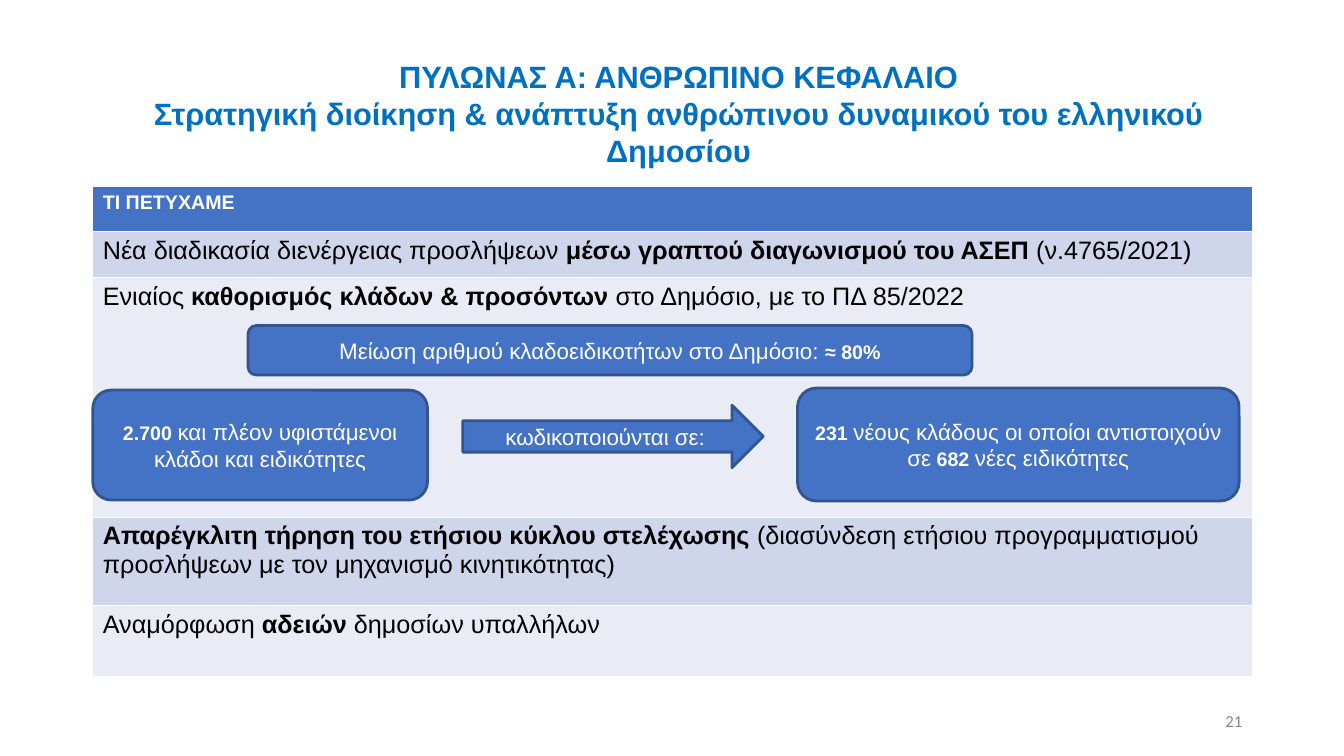
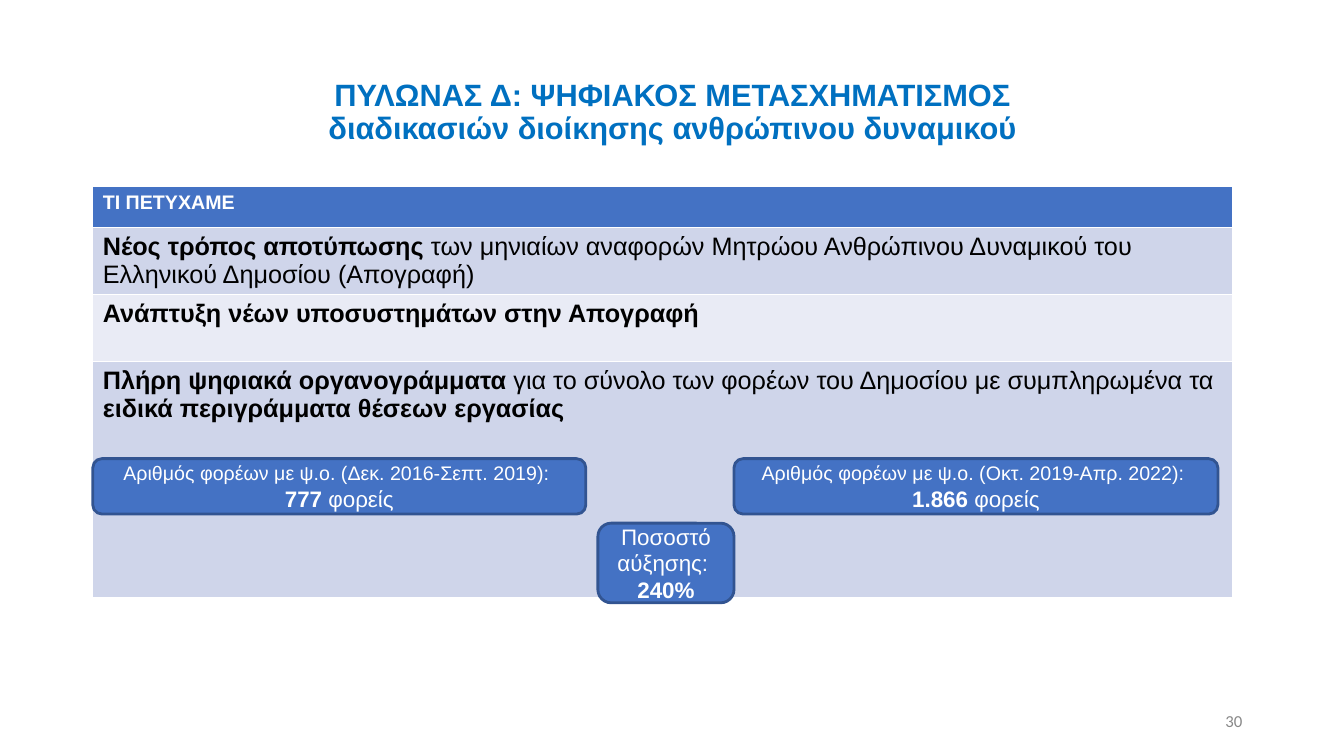
from dataclasses import dataclass
from typing import NamedTuple

from pptx import Presentation
from pptx.dml.color import RGBColor
from pptx.enum import shapes, text
from pptx.slide import Slide
from pptx.text.text import TextFrame
from pptx.util import Inches, Pt

TITLE_BLUE = RGBColor(0x00, 0x70, 0xC0)
BLUE = RGBColor(0x44, 0x72, 0xC4)
OUTLINE = RGBColor(0x32, 0x54, 0x91)
BANDS = (RGBColor(0xCF, 0xD5, 0xEA), RGBColor(0xE9, 0xEB, 0xF5))
WHITE = RGBColor(0xFF, 0xFF, 0xFF)
BLACK = RGBColor(0x00, 0x00, 0x00)
GREY = RGBColor(0x88, 0x88, 0x88)

LEFT, TABLE_TOP = 0.92, 1.85
HEADING = "ΤΙ ΠΕΤΥΧΑΜΕ"
ROUNDED = shapes.MSO_SHAPE.ROUNDED_RECTANGLE
ARROW = shapes.MSO_SHAPE.RIGHT_ARROW
CENTER = text.PP_ALIGN.CENTER


class Run(NamedTuple):
    words: str
    size: float = 18
    bold: bool = False


Line = tuple[Run, ...]


class Row(NamedTuple):
    height: float
    runs: Line


class Callout(NamedTuple):
    left: float
    top: float
    width: float
    height: float
    lines: tuple[Line, ...]
    outline: shapes.MSO_SHAPE = ROUNDED


@dataclass(frozen=True)
class Pillar:
    title: tuple[str, str]
    title_inset: float
    title_spacing: float
    table_width: float
    heading_height: float
    achievements: tuple[Row, ...]
    callouts: tuple[Callout, ...]
    number: str


def write(frame: TextFrame, lines: tuple[Line, ...], color: RGBColor,
          align: text.PP_ALIGN = text.PP_ALIGN.LEFT, font: str = "Arial") -> None:
    for index, line in enumerate(lines):
        paragraph = frame.add_paragraph() if index else frame.paragraphs[0]
        paragraph.alignment = align
        for words, size, bold in line:
            run = paragraph.add_run()
            run.text = words
            run.font.name = font
            run.font.size = Pt(size)
            run.font.bold = bold
            run.font.color.rgb = color


def add_title(slide: Slide, pillar: Pillar) -> None:
    title = slide.shapes.title
    title.left, title.top = Inches(LEFT), Inches(0.4)
    title.width, title.height = Inches(11.5), Inches(1.45)
    frame = title.text_frame
    frame.auto_size = text.MSO_AUTO_SIZE.NONE
    frame.vertical_anchor = text.MSO_ANCHOR.MIDDLE
    frame.margin_left = Inches(pillar.title_inset)
    name, subject = pillar.title
    write(frame, ((Run(name, 22, True),),), TITLE_BLUE, CENTER)
    paragraph = frame.paragraphs[0]
    paragraph.line_spacing = pillar.title_spacing
    paragraph.add_line_break()
    write(frame, ((Run(subject, 22, True),),), TITLE_BLUE, CENTER)


def add_achievements(slide: Slide, pillar: Pillar) -> None:
    rows = (Row(pillar.heading_height, (Run(HEADING, 14, True),)), *pillar.achievements)
    table = slide.shapes.add_table(
        len(rows), 1, Inches(LEFT), Inches(TABLE_TOP), Inches(pillar.table_width),
        Inches(sum(row.height for row in rows))).table
    for index, row in enumerate(rows):
        table.rows[index].height = Inches(row.height)
        cell = table.cell(index, 0)
        cell.fill.solid()
        cell.fill.fore_color.rgb = BANDS[(index - 1) % 2] if index else BLUE
        write(cell.text_frame, (row.runs,), BLACK if index else WHITE)


def add_callout(slide: Slide, callout: Callout) -> None:
    box = slide.shapes.add_shape(
        callout.outline, Inches(callout.left), Inches(callout.top),
        Inches(callout.width), Inches(callout.height))
    box.shadow.inherit = False
    box.fill.solid()
    box.fill.fore_color.rgb = BLUE
    box.line.color.rgb = OUTLINE
    box.line.width = Pt(2)
    box.text_frame.word_wrap = True
    box.text_frame.vertical_anchor = text.MSO_ANCHOR.MIDDLE
    write(box.text_frame, callout.lines, WHITE, CENTER)


def add_number(slide: Slide, number: str) -> None:
    frame = slide.shapes.add_textbox(
        Inches(9.42), Inches(6.95), Inches(3), Inches(0.4)).text_frame
    frame.word_wrap = True
    frame.vertical_anchor = text.MSO_ANCHOR.MIDDLE
    write(frame, ((Run(number, 12),),), GREY, text.PP_ALIGN.RIGHT, "Calibri")


def bodies(period: str, count: str) -> tuple[Line, ...]:
    return ((Run(f"Αριθμός φορέων με ψ.ο. ({period}): ", 14),),
            (Run(f"{count} ", 16, True), Run("φορείς", 16)))


PILLARS = (
    Pillar(
        title=("ΠΥΛΩΝΑΣ Α: ΑΝΘΡΩΠΙΝΟ ΚΕΦΑΛΑΙΟ",
               "Στρατηγική διοίκηση & ανάπτυξη ανθρώπινου δυναμικού του ελληνικού Δημοσίου"),
        title_inset=0.22,
        title_spacing=1.0,
        table_width=11.5,
        heading_height=0.45,
        achievements=(
            Row(0.45, (Run("Νέα διαδικασία διενέργειας προσλήψεων "),
                       Run("μέσω γραπτού διαγωνισμού του ΑΣΕΠ ", bold=True),
                       Run("(ν.4765/2021)"))),
            Row(2.38, (Run("Ενιαίος "),
                       Run("καθορισμός κλάδων & προσόντων ", bold=True),
                       Run("στο Δημόσιο, με το ΠΔ 85/2022"))),
            Row(0.88, (Run("Απαρέγκλιτη τήρηση του ετήσιου κύκλου στελέχωσης ", bold=True),
                       Run("(διασύνδεση ετήσιου προγραμματισμού προσλήψεων "
                           "με τον μηχανισμό κινητικότητας)"))),
            Row(0.7, (Run("Αναμόρφωση "), Run("αδειών", bold=True),
                      Run(" δημοσίων υπαλλήλων"))),
        ),
        callouts=(
            Callout(LEFT, 3.87, 3.32, 1.09, (
                (Run("2.700 ", 14, True),
                 Run("και πλέον υφιστάμενοι κλάδοι και ειδικότητες", 16)),)),
            Callout(7.91, 3.85, 4.38, 1.12, (
                (Run("231 ", 14, True),
                 Run("νέους κλάδους οι οποίοι αντιστοιχούν σε", 16),
                 Run(" ", 14), Run("682 ", 14, True), Run("νέες ειδικότητες", 16)),)),
            Callout(2.46, 3.23, 7.18, 0.49, (
                (Run("Μείωση αριθμού κλαδοειδικοτήτων στο Δημόσιο: ", 16),
                 Run("≈ 80%", 14, True)),)),
            Callout(4.59, 4.02, 2.98, 0.62, ((Run("κωδικοποιούνται σε:", 16),),), ARROW),
        ),
        number="21",
    ),
    Pillar(
        title=("ΠΥΛΩΝΑΣ Δ: ΨΗΦΙΑΚΟΣ ΜΕΤΑΣΧΗΜΑΤΙΣΜΟΣ",
               "διαδικασιών διοίκησης ανθρώπινου δυναμικού"),
        title_inset=0.1,
        title_spacing=0.9,
        table_width=11.3,
        heading_height=0.41,
        achievements=(
            Row(0.65, (Run("Νέος τρόπος αποτύπωσης ", bold=True),
                       Run("των μηνιαίων αναφορών Μητρώου Ανθρώπινου Δυναμικού "
                           "του Ελληνικού Δημοσίου (Απογραφή)"))),
            Row(0.67, (Run("Ανάπτυξη νέων υποσυστημάτων στην Απογραφή", bold=True),)),
            Row(2.34, (Run("Πλήρη ψηφιακά οργανογράμματα", bold=True),
                       Run(" για το σύνολο των φορέων του Δημοσίου με συμπληρωμένα τα "),
                       Run("ειδικά περιγράμματα θέσεων εργασίας", bold=True))),
        ),
        callouts=(
            Callout(LEFT, 4.55, 4.89, 0.55, bodies("Δεκ. 2016-Σεπτ. 2019", "777")),
            Callout(7.28, 4.55, 4.8, 0.55, bodies("Οκτ. 2019-Απρ. 2022", "1.866")),
            Callout(5.93, 5.19, 1.35, 0.79, (
                (Run("Ποσοστό αύξησης: ", 16),), (Run("240%", 16, True),))),
        ),
        number="30",
    ),
)


def main() -> None:
    deck = Presentation()
    deck.slide_width, deck.slide_height = Inches(13.33), Inches(7.5)
    for pillar in PILLARS:
        slide = deck.slides.add_slide(deck.slide_layouts[5])
        add_title(slide, pillar)
        add_achievements(slide, pillar)
        for callout in pillar.callouts:
            add_callout(slide, callout)
        add_number(slide, pillar.number)
    deck.save("out.pptx")


if __name__ == "__main__":
    main()
